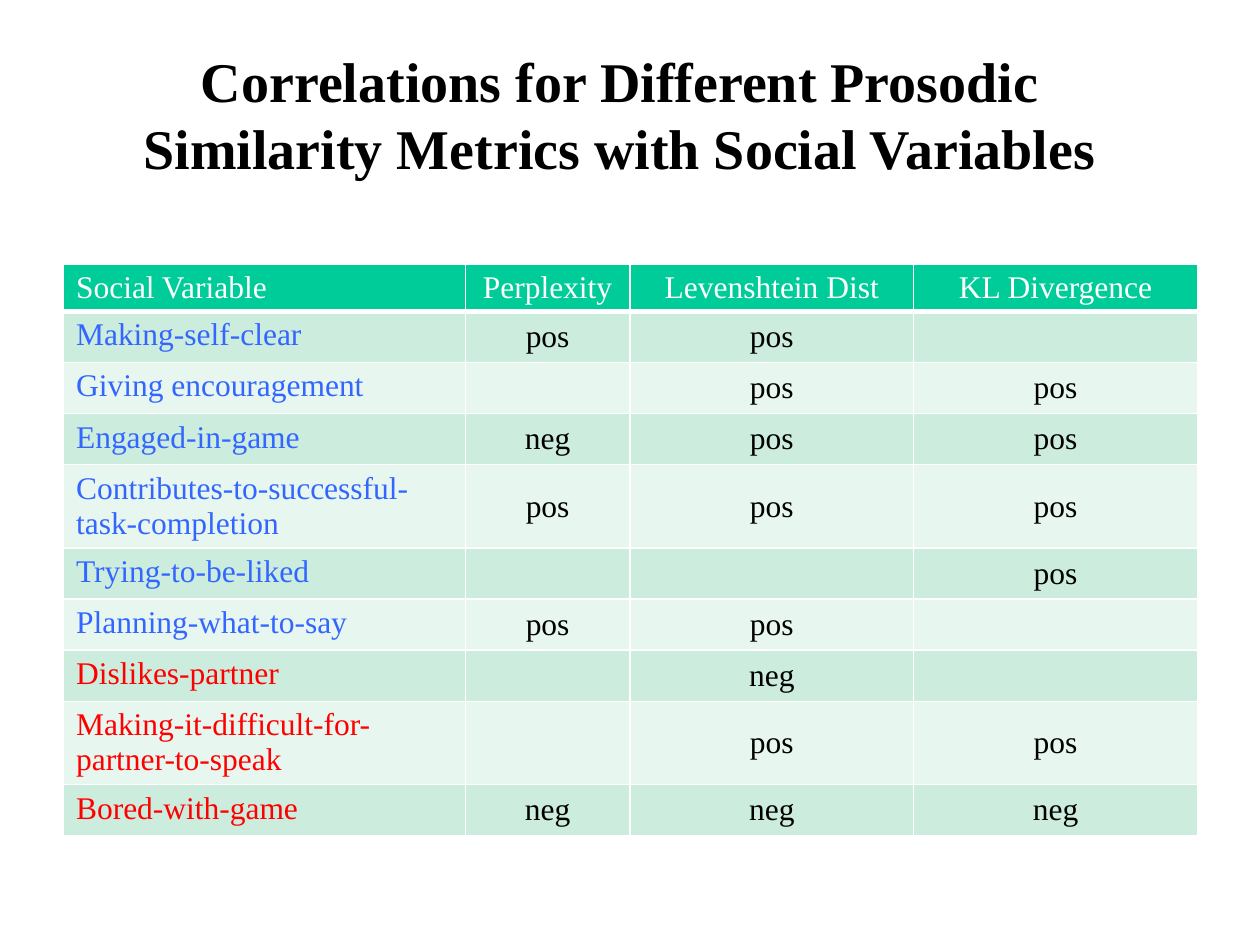
from lxml import etree
from pptx import Presentation
from pptx import util as u
from pptx.dml.color import RGBColor
from pptx.enum import text
from pptx.oxml.ns import qn

COLORS = {
    "header": "00CC99",
    "odd": "CCECDE",
    "even": "E7F6EF",
    "positive": "3366FF",
    "negative": "FF0000",
    "black": "000000",
    "white": "FFFFFF",
}
HEADERS = ["Social Variable", "Perplexity", "Levenshtein Dist", "KL Divergence"]
CORRELATIONS = [
    ("positive", "Making-self-clear", "pos", "pos", ""),
    ("positive", "Giving encouragement", "", "pos", "pos"),
    ("positive", "Engaged-in-game", "neg", "pos", "pos"),
    ("positive", "Contributes-to-successful-task-completion", "pos", "pos", "pos"),
    ("positive", "Trying-to-be-liked", "", "", "pos"),
    ("positive", "Planning-what-to-say", "pos", "pos", ""),
    ("negative", "Dislikes-partner", "", "neg", ""),
    ("negative", "Making-it-difficult-for-partner-to-speak", "", "pos", "pos"),
    ("negative", "Bored-with-game", "neg", "neg", "neg"),
]
COL_WIDTHS = [8.1, 3.32, 5.72, 5.72]
HEADER_HEIGHT, ROW_HEIGHT, TALL_HEIGHT = 0.95, 1.03, 1.68
TALL_ROWS = {4, 8}


class Deck:
    font = "Times New Roman"

    def __init__(self, width, height):
        self.prs = Presentation()
        self.prs.slide_width, self.prs.slide_height = u.Cm(width), u.Cm(height)
        self.s = self.prs.slides.add_slide(self.prs.slide_layouts[5])

    def set_text(self, tf, content, size, color, align, bold=False):
        tf.text = content
        p = tf.paragraphs[0]
        p.alignment = align
        for font in [p.font] + [r.font for r in p.runs]:
            font.name, font.size, font.bold = self.font, u.Pt(size), bold
            font.color.rgb = RGBColor.from_string(COLORS[color])

    def title(self, content, x, y, w, h):
        sp = self.s.shapes.title
        sp.left, sp.top, sp.width, sp.height = map(u.Cm, (x, y, w, h))
        tf = sp.text_frame
        tf.word_wrap, tf.auto_size = True, text.MSO_AUTO_SIZE.NONE
        tf.vertical_anchor = text.MSO_ANCHOR.MIDDLE
        self.set_text(tf, content, 32, "black", text.PP_ALIGN.CENTER, True)

    def borders(self, cell, bottom):
        tcPr = cell._tc.get_or_add_tcPr()
        for i, (side, width) in enumerate(zip("LRTB", (1, 1, 1, bottom))):
            ln = etree.Element(qn(f"a:ln{side}"), w=str(u.Pt(width)))
            fill = etree.SubElement(ln, qn("a:solidFill"))
            etree.SubElement(fill, qn("a:srgbClr"), val=COLORS["white"])
            tcPr.insert(i, ln)

    def cell(self, cell, content, fill, color, is_label, bottom=1):
        align = text.PP_ALIGN.LEFT if is_label else text.PP_ALIGN.CENTER
        self.set_text(cell.text_frame, content, 18, color, align)
        cell.vertical_anchor = text.MSO_ANCHOR.TOP if is_label else text.MSO_ANCHOR.MIDDLE
        cell.fill.solid()
        cell.fill.fore_color.rgb = RGBColor.from_string(COLORS[fill])
        self.borders(cell, bottom)

    def table(self, x, y, headers, rows):
        heights = [HEADER_HEIGHT] + [
            TALL_HEIGHT if i in TALL_ROWS else ROW_HEIGHT for i in range(1, len(rows) + 1)
        ]
        size = map(u.Cm, (x, y, sum(COL_WIDTHS), sum(heights)))
        table = self.s.shapes.add_table(len(heights), len(headers), *size).table
        for column, width in zip(table.columns, COL_WIDTHS):
            column.width = u.Cm(width)
        for row, height in zip(table.rows, heights):
            row.height = u.Cm(height)
        for j, header in enumerate(headers):
            self.cell(table.cell(0, j), header, "header", "white", j == 0, 3)
        for i, (label_color, *values) in enumerate(rows, 1):
            fill = "odd" if i % 2 else "even"
            for j, value in enumerate(values):
                color = "black" if j else label_color
                self.cell(table.cell(i, j), value, fill, color, j == 0)


def main():
    deck = Deck(25.4, 19.05)
    deck.title(
        "Correlations for Different Prosodic Similarity Metrics with Social Variables",
        1.7, 1, 21.6, 2.57,
    )
    deck.table(1.28, 5.32, HEADERS, CORRELATIONS)
    deck.prs.save("out.pptx")


if __name__ == "__main__":
    main()
